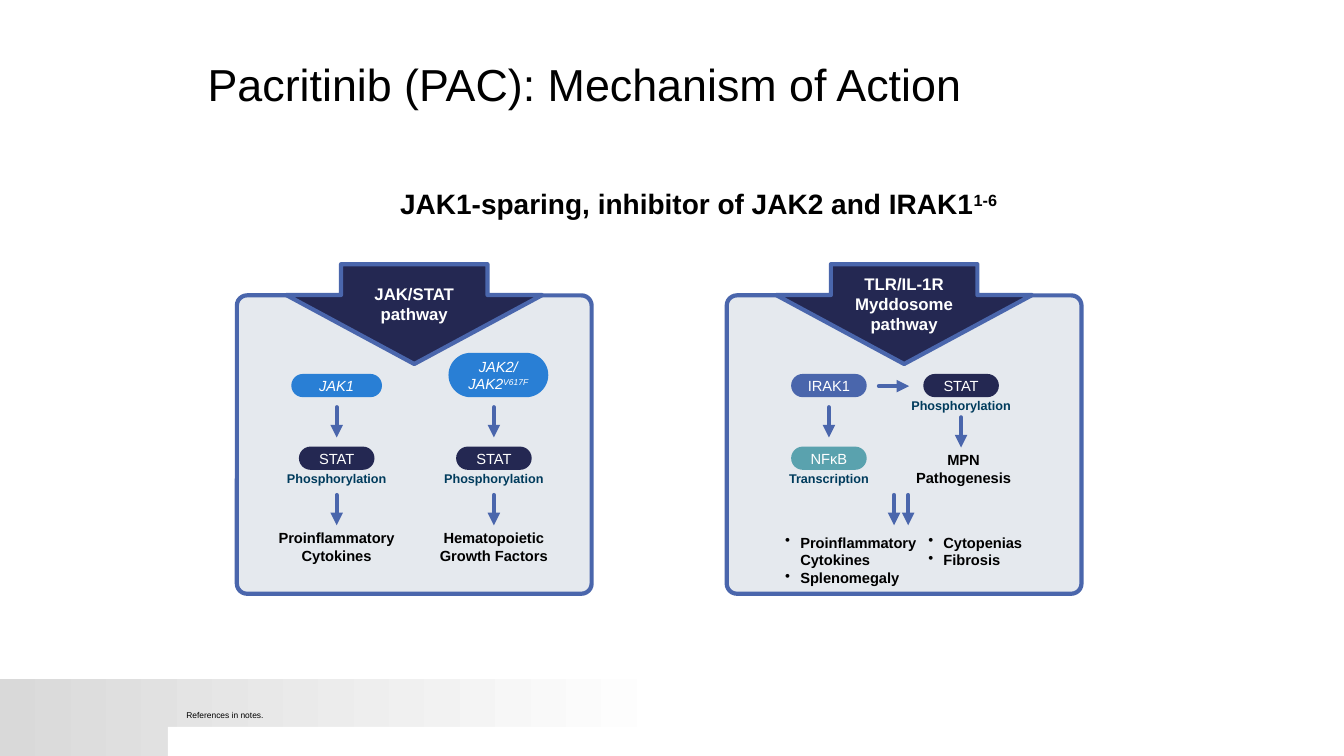
from lxml.etree import SubElement
from pptx import Presentation
from pptx.dml.color import RGBColor
from pptx.enum.shapes import MSO_CONNECTOR, MSO_SHAPE
from pptx.enum.text import MSO_ANCHOR, PP_ALIGN
from pptx.oxml.ns import qn
from pptx.util import Pt

BLACK = RGBColor(0x00, 0x00, 0x00)
WHITE = RGBColor(0xFF, 0xFF, 0xFF)
GREY = RGBColor(0xD9, 0xD9, 0xD9)
PANEL = RGBColor(0xE5, 0xE9, 0xEE)
EDGE = RGBColor(0x4A, 0x66, 0xAC)
NAVY = RGBColor(0x24, 0x28, 0x52)
BLUE = RGBColor(0x29, 0x7F, 0xD5)
TEAL = RGBColor(0x5A, 0xA2, 0xAE)
CAPTION = RGBColor(0x00, 0x3B, 0x5C)

FONT = "Arial"
PANEL_W, PANEL_H = 253.4, 213.1
ARROW_LEN = 21.6
PILL_H = 16.6


def write(tf, lines, size, color, bold=False, italic=False,
          align=PP_ALIGN.CENTER, bullet=False, anchor=MSO_ANCHOR.MIDDLE):
    """Fill a text frame; text after ^ in a line is superscript."""
    tf.word_wrap = True
    tf.vertical_anchor = anchor
    tf.margin_left = tf.margin_right = tf.margin_top = tf.margin_bottom = 0
    for i, line in enumerate(lines):
        p = tf.paragraphs[0] if i == 0 else tf.add_paragraph()
        p.alignment = align
        if bullet:
            pPr = p._p.get_or_add_pPr()
            pPr.set("marL", str(Pt(10.8)))
            pPr.set("indent", str(-Pt(10.8)))
            SubElement(pPr, qn("a:buChar")).set("char", "•")
        for j, text in enumerate(line.split("^")):
            r = p.add_run()
            r.text = text
            r.font.name, r.font.size = FONT, Pt(size)
            r.font.bold, r.font.italic = bold, italic
            r.font.color.rgb = color
            if j:
                r._r.get_or_add_rPr().set("baseline", "30000")


def add_text(s, x, y, w, h, lines, size, color=BLACK, **style):
    sp = s.shapes.add_textbox(Pt(x), Pt(y), Pt(w), Pt(h))
    write(sp.text_frame, lines, size, color, **style)
    return sp


def add_box(s, kind, x, y, w, h, fill, line=None, adj=()):
    sp = s.shapes.add_shape(kind, Pt(x), Pt(y), Pt(w), Pt(h))
    sp.shadow.inherit = False
    sp.fill.solid()
    sp.fill.fore_color.rgb = fill
    if line is None:
        sp.line.fill.background()
    else:
        sp.line.color.rgb = line
        sp.line.width = Pt(3)
    for i, value in enumerate(adj):
        sp.adjustments[i] = value
    return sp


def add_pill(s, cx, cy, lines, fill, w=54, h=PILL_H, italic=False):
    sp = add_box(s, MSO_SHAPE.ROUNDED_RECTANGLE, cx - w / 2, cy - h / 2, w, h,
                 fill, adj=[0.5])
    write(sp.text_frame, lines, 10.5, WHITE, italic=italic)


def add_caption(s, cx, y, text):
    add_text(s, cx - 47.5, y, 95, 10.8, [text], 9, CAPTION, bold=True,
             anchor=MSO_ANCHOR.TOP)


def add_outcome(s, cx, cy, lines):
    add_text(s, cx - 50, cy - 12.6, 100, 25.2, lines, 10.5, bold=True)


def add_arrow(s, x, y, dx=0, dy=ARROW_LEN):
    cxn = s.shapes.add_connector(MSO_CONNECTOR.STRAIGHT, Pt(x), Pt(y),
                                 Pt(x + dx), Pt(y + dy))
    cxn.line.color.rgb = EDGE
    cxn.line.width = Pt(3)
    ln = cxn.line._get_or_add_ln()
    ln.set("cap", "rnd")
    SubElement(ln, qn("a:tailEnd")).set("type", "triangle")
    SubElement(cxn._element.spPr, qn("a:effectLst"))


def add_panel(s, x, y, heading):
    """Rounded panel with the pathway arrow pointing into it."""
    add_box(s, MSO_SHAPE.ROUNDED_RECTANGLE, x, y, PANEL_W, PANEL_H, PANEL,
            EDGE, [0.034])
    sp = add_box(s, MSO_SHAPE.DOWN_ARROW, x + 35.3, y - 22.3, 182.9, 71.3,
                 NAVY, EDGE, [0.572, 0.691])
    tf = sp.text_frame
    write(tf, [heading], 12, WHITE, bold=True)
    tf.margin_left = tf.margin_right = Pt(7.2)
    tf.margin_top = Pt(13.8)


def add_jak_stat(s, x, y):
    add_panel(s, x, y, "JAK/STAT pathway")
    left, right = x + 71.3, x + 183.6
    add_pill(s, left, y + 64.4, ["JAK1"], BLUE, w=64.8, italic=True)
    add_pill(s, right + 3.2, y + 56.9, ["JAK2/", "JAK2^V617F"], BLUE,
             w=71.3, h=31.7, italic=True)
    outcomes = [(left, ["Proinflammatory", "Cytokines"]),
                (right, ["Hematopoietic", "Growth Factors"])]
    for cx, outcome in outcomes:
        add_arrow(s, cx, y + 79.9)
        add_pill(s, cx, y + 116.3, ["STAT"], NAVY)
        add_caption(s, cx, y + 125.3, "Phosphorylation")
        add_arrow(s, cx, y + 142.6)
        add_outcome(s, cx, y + 179.6, outcome)


def add_myddosome(s, x, y):
    add_panel(s, x, y, "TLR/IL-1R Myddosome pathway")
    left, right = x + 73, x + 167.4
    # NFκB branch
    add_pill(s, left, y + 64.4, ["IRAK1"], EDGE)
    add_arrow(s, left, y + 79.9)
    add_pill(s, left, y + 116.3, ["NFκB"], TEAL)
    add_caption(s, left, y + 125.3, "Transcription")
    # STAT branch
    add_arrow(s, x + 108.7, y + 64.8, dx=ARROW_LEN, dy=0)
    add_pill(s, right, y + 64.4, ["STAT"], NAVY)
    add_caption(s, right, y + 73.4, "Phosphorylation")
    add_arrow(s, right, y + 87.1)
    add_outcome(s, right + 1.8, y + 123.5, ["MPN", "Pathogenesis"])
    # Shared effects
    for dx in (119.5, 129.6):
        add_arrow(s, x + dx, y + 142.6)
    effects = [(41.8, 170, 38.2, ["Proinflammatory Cytokines", "Splenomegaly"]),
               (144, 170, 25.2, ["Cytopenias", "Fibrosis"])]
    for dx, dy, h, lines in effects:
        add_text(s, x + dx, y + dy, 98, h, lines, 10.5, bold=True,
                 align=PP_ALIGN.LEFT, bullet=True)


def add_footer(s, x, y, w, h):
    bar = add_box(s, MSO_SHAPE.RECTANGLE, x, y, w, h, WHITE)
    bar.fill.gradient()
    bar.fill.gradient_angle = 0
    for stop, color, pos in zip(bar.fill.gradient_stops, (GREY, WHITE), (0, 0.5)):
        stop.color.rgb = color
        stop.position = pos
    add_box(s, MSO_SHAPE.RECTANGLE, x + 120, y + 33.9, 720, h - 33.9, WHITE)
    add_text(s, x + 133.2, y + 18.7, 246, 13, ["References in notes."], 6,
             align=PP_ALIGN.LEFT)


def add_heading(s, x, y, w, h):
    title = s.shapes.title
    title.left, title.top, title.width, title.height = Pt(x), Pt(y), Pt(w), Pt(h)
    write(title.text_frame, ["Pacritinib (PAC): Mechanism of Action"], 32, BLACK,
          align=PP_ALIGN.LEFT)
    title.text_frame.paragraphs[0].line_spacing = 0.9
    add_text(s, x + 137.5, y + 90.7, 440, 24.5,
             ["JAK1-sparing, inhibitor of JAK2 and IRAK1^1-6"], 20, bold=True,
             align=PP_ALIGN.LEFT, anchor=MSO_ANCHOR.TOP)


def main():
    prs = Presentation()
    prs.slide_width, prs.slide_height = Pt(960), Pt(540)
    s = prs.slides.add_slide(prs.slide_layouts[5])
    add_footer(s, 0, 485.3, 960, 54.7)
    add_heading(s, 148.3, 42.5, 654.5, 38.9)
    add_jak_stat(s, 169.2, 211)
    add_myddosome(s, 519.1, 211)
    prs.save("out.pptx")


if __name__ == "__main__":
    main()
